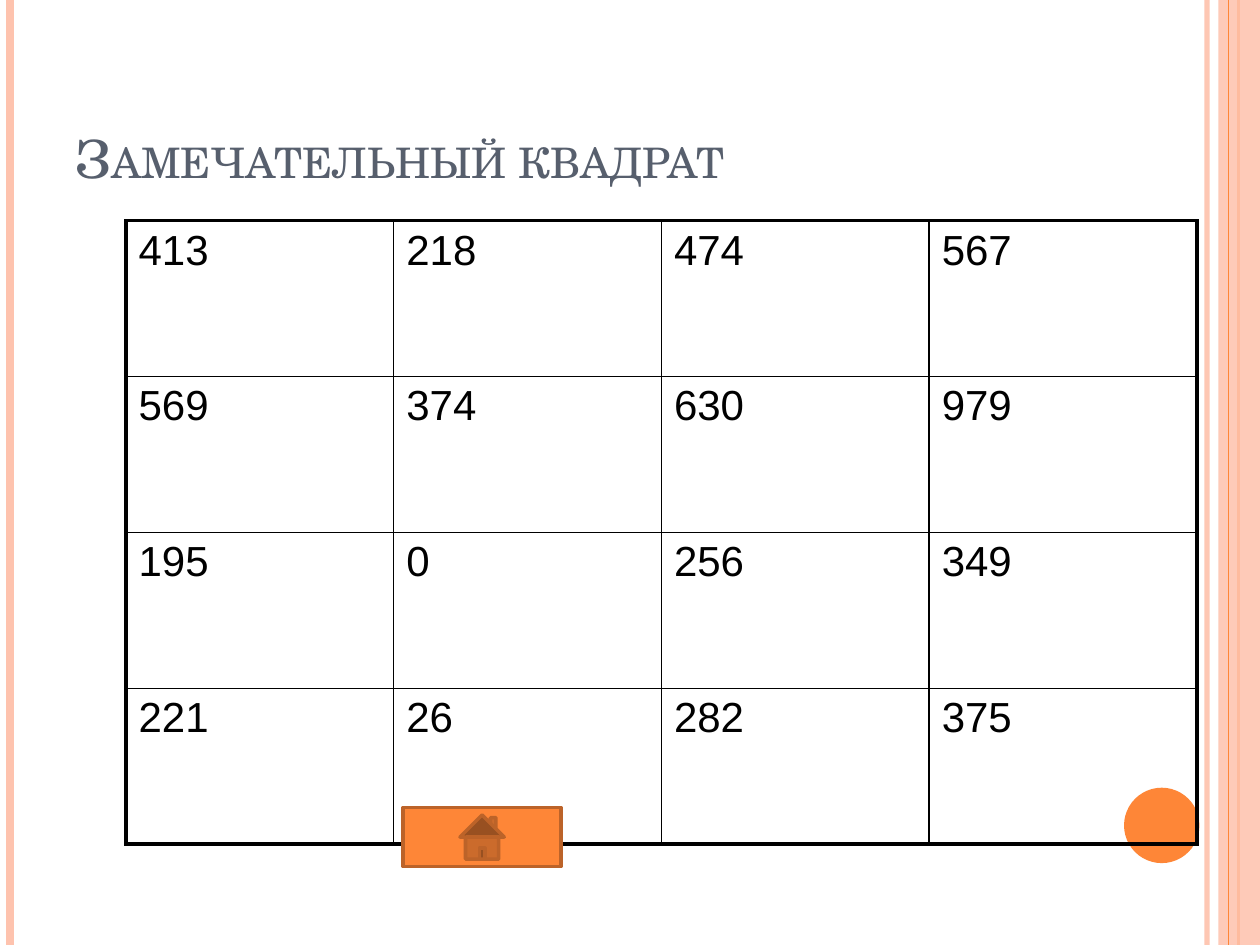
from dataclasses import dataclass

from lxml.etree import SubElement
from pptx import Presentation
from pptx.dml.color import RGBColor as Rgb
from pptx.enum.shapes import MSO_CONNECTOR as Link, MSO_SHAPE as Shape
from pptx.enum.text import MSO_ANCHOR as Anchor, PP_ALIGN as Align
from pptx.oxml.ns import qn
from pptx.util import Cm, Pt


@dataclass(frozen=True)
class Theme:
    ink: str = "000000"
    heading: str = "575F6D"
    accent: str = "FE8637"
    accent_dark: str = "BC6329"
    pale: str = "FEC3AE"
    title_font: str = "TeX Gyre Schola"
    body_font: str = "Arial"
    title_size: float = 30
    body_size: float = 24
    thin: float = 1
    thick: float = 2.25


class Page:
    def __init__(self, deck, theme):
        self.theme = theme
        self.height = deck.slide_height
        self.slide = deck.slides.add_slide(deck.slide_layouts[5])

    def set_font(self, para, name, size, color):
        para.font.name = name
        para.font.size = Pt(size)
        para.font.color.rgb = Rgb.from_string(color)

    def set_alpha(self, fill_owner, percent):
        color = next(fill_owner.iter(qn("a:srgbClr")))
        SubElement(color, qn("a:alpha"), val=str(percent * 1000))

    def title(self, text, left, top, width, height):
        box = self.slide.shapes.title
        box.left, box.top, box.width, box.height = map(Cm, (left, top, width, height))
        frame = box.text_frame
        frame.text = text
        frame.word_wrap = True
        frame.vertical_anchor = Anchor.BOTTOM
        para = frame.paragraphs[0]
        para.alignment = Align.LEFT
        self.set_font(para, self.theme.title_font, self.theme.title_size, self.theme.heading)
        para.runs[0].font._element.set("cap", "small")

    def stripe(self, x, color, weight, opacity=100):
        line = self.slide.shapes.add_connector(Link.STRAIGHT, Cm(x), 0, Cm(x), self.height)
        line.line.color.rgb = Rgb.from_string(color)
        line.line.width = Pt(weight)
        properties = line._element.spPr
        SubElement(properties, qn("a:effectLst"))
        if opacity < 100:
            self.set_alpha(properties, opacity)

    def shape(self, kind, left, top, width, height, fill, outline=None, opacity=100):
        box = self.slide.shapes.add_shape(kind, *map(Cm, (left, top, width, height)))
        box.shadow.inherit = False
        box.fill.solid()
        box.fill.fore_color.rgb = Rgb.from_string(fill)
        if outline:
            box.line.color.rgb = Rgb.from_string(outline)
            box.line.width = Pt(2)
        else:
            box.line.fill.background()
        if opacity < 100:
            self.set_alpha(box._element.spPr, opacity)

    def border(self, cell, side, weight):
        line = SubElement(cell._tc.get_or_add_tcPr(), qn(f"a:ln{side}"), w=str(Pt(weight)))
        fill = SubElement(line, qn("a:solidFill"))
        SubElement(fill, qn("a:srgbClr"), val=self.theme.ink)

    def table(self, rows, left, top, width, height):
        last_row, last_column = len(rows) - 1, len(rows[0]) - 1
        frame = self.slide.shapes.add_table(
            last_row + 1, last_column + 1, *map(Cm, (left, top, width, height))
        )
        table = frame.table
        table.first_row = table.horz_banding = False
        for r, row in enumerate(rows):
            for c, value in enumerate(row):
                cell = table.cell(r, c)
                cell.text = str(value)
                para = cell.text_frame.paragraphs[0]
                self.set_font(para, self.theme.body_font, self.theme.body_size, self.theme.ink)
                outer = {"L": c == 0, "R": c == last_column, "T": r == 0, "B": r == last_row}
                for side, is_outer in outer.items():
                    self.border(cell, side, self.theme.thick if is_outer else self.theme.thin)
                cell.fill.background()


def main():
    deck = Presentation()
    deck.slide_width, deck.slide_height = Cm(25.4), Cm(19.05)
    theme = Theme()
    page = Page(deck, theme)

    page.stripe(24.33, theme.pale, 3, opacity=93)
    page.stripe(0.2, theme.pale, 4.5)
    page.stripe(24.97, theme.accent, 1.5)
    page.shape(Shape.RECTANGLE, 24.56, 0, 0.84, 19.05, theme.pale, opacity=87)
    page.stripe(24.77, theme.accent, 0.75)
    page.shape(Shape.OVAL, 22.66, 15.88, 1.52, 1.52, theme.accent)

    page.title("Замечательный квадрат", 1.27, 0.76, 20.75, 3.18)
    square = [
        [413, 218, 474, 567],
        [569, 374, 630, 979],
        [195, 0, 256, 349],
        [221, 26, 282, 375],
    ]
    page.table(square, 2.54, 4.45, 21.59, 12.57)
    page.shape(
        Shape.ACTION_BUTTON_HOME, 8.13, 16.28, 3.18, 1.19, theme.accent, theme.accent_dark
    )
    deck.save("out.pptx")


if __name__ == "__main__":
    main()
